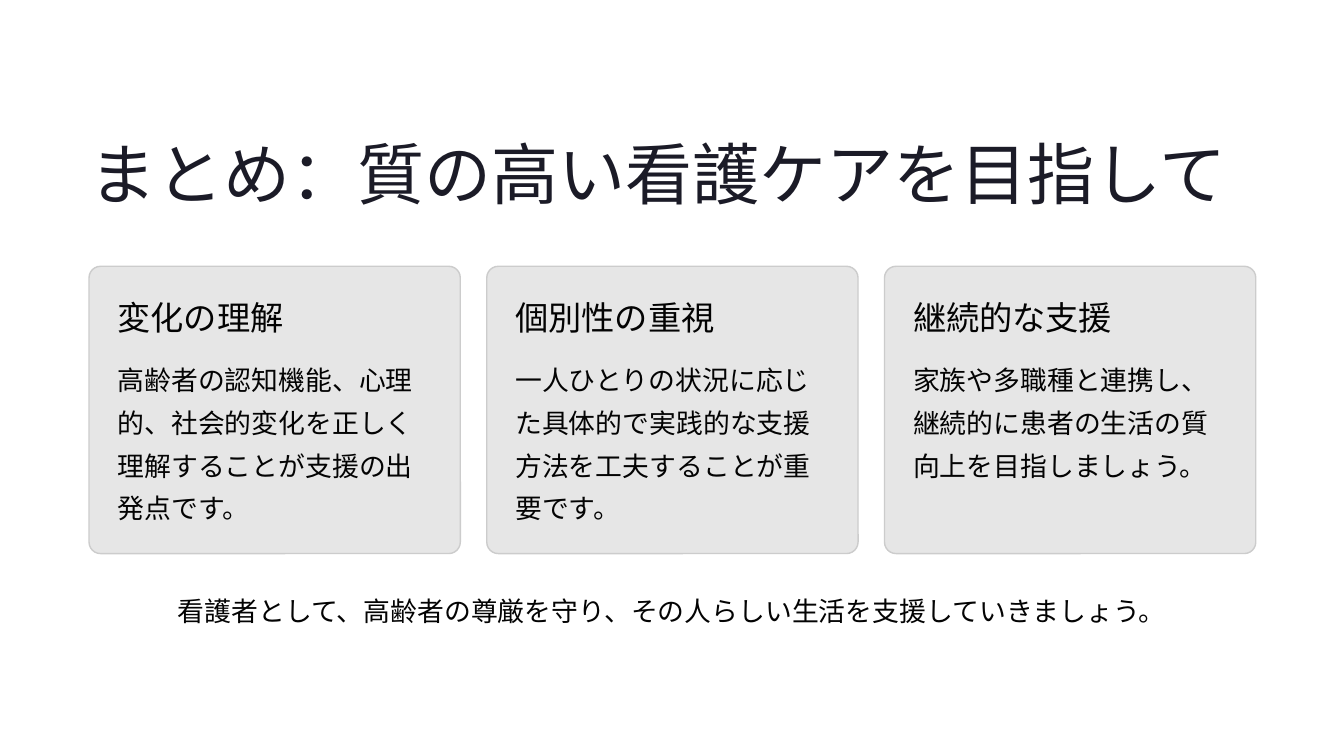
import dataclasses

import pptx
import pptx.dml.color
import pptx.enum.shapes
import pptx.enum.text
import pptx.util
from pptx.util import Inches

ALIGN = pptx.enum.text.PP_ALIGN


@dataclasses.dataclass(frozen=True)
class Theme:
    heading_font: str = "Inter"
    body_font: str = "Lato"
    background: str = "FFFFFF"
    title_color: str = "1B1B27"
    text_color: str = "030303"
    card_fill: str = "E6E6E6"
    card_line: str = "CCCCCC"
    title_size: float = 57.5
    heading_size: float = 28.5
    body_size: float = 23
    title_leading: float = 72
    heading_leading: float = 36
    body_leading: float = 36.5


@dataclasses.dataclass(frozen=True)
class Card:
    heading: str
    body: str


THEME = Theme()
CARDS = [
    Card("変化の理解", "高齢者の認知機能、心理的、社会的変化を正しく理解することが支援の出発点です。"),
    Card("個別性の重視", "一人ひとりの状況に応じた具体的で実践的な支援方法を工夫することが重要です。"),
    Card("継続的な支援", "家族や多職種と連携し、継続的に患者の生活の質向上を目指しましょう。"),
]
MARGIN = 1.06
CONTENT_WIDTH = 13.89
CARD_TOP, CARD_WIDTH, CARD_HEIGHT = 3.17, 4.42, 3.42
CARD_PADDING = 0.34
CARD_PITCH = (CONTENT_WIDTH - CARD_WIDTH) / (len(CARDS) - 1)


def rgb(value: str) -> pptx.dml.color.RGBColor:
    return pptx.dml.color.RGBColor.from_string(value)


def write_text(box, text: str, *, font: str, size: float, leading: float,
               color: str = THEME.text_color, align=ALIGN.LEFT, wrap: bool = False) -> None:
    frame = box.text_frame
    frame.margin_left = frame.margin_top = frame.margin_right = frame.margin_bottom = 0
    frame.auto_size = pptx.enum.text.MSO_AUTO_SIZE.NONE
    frame.vertical_anchor = pptx.enum.text.MSO_ANCHOR.TOP
    frame.word_wrap = wrap
    para = frame.paragraphs[0]
    para.alignment = align
    para.line_spacing = pptx.util.Pt(leading)
    span = para.add_run()
    span.text = text
    span.font.name = font
    span.font.size = pptx.util.Pt(size)
    span.font.color.rgb = rgb(color)


def add_text(page, left: float, top: float, width: float, height: float,
             text: str, **text_format) -> None:
    box = page.shapes.add_textbox(Inches(left), Inches(top), Inches(width), Inches(height))
    write_text(box, text, **text_format)


def add_title(page, text: str) -> None:
    title = page.shapes.title
    title.left, title.top = Inches(MARGIN), Inches(1.53)
    title.width, title.height = Inches(13.61), Inches(1)
    write_text(title, text, font=THEME.heading_font, size=THEME.title_size,
               leading=THEME.title_leading, color=THEME.title_color)


def add_card(page, card: Card, left: float) -> None:
    panel = page.shapes.add_shape(
        pptx.enum.shapes.MSO_SHAPE.ROUNDED_RECTANGLE,
        Inches(left), Inches(CARD_TOP), Inches(CARD_WIDTH), Inches(CARD_HEIGHT))
    panel.adjustments[0] = 0.04
    panel.shadow.inherit = False
    panel.fill.solid()
    panel.fill.fore_color.rgb = rgb(THEME.card_fill)
    panel.line.color.rgb = rgb(THEME.card_line)
    panel.line.width = pptx.util.Pt(1.2)

    text_left = left + CARD_PADDING
    text_width = CARD_WIDTH - 2 * CARD_PADDING
    add_text(page, text_left, CARD_TOP + CARD_PADDING, text_width, 0.5, card.heading,
             font=THEME.heading_font, size=THEME.heading_size, leading=THEME.heading_leading)
    add_text(page, text_left, CARD_TOP + 1.04, text_width, 2.05, card.body,
             font=THEME.body_font, size=THEME.body_size, leading=THEME.body_leading, wrap=True)


def main() -> None:
    deck = pptx.Presentation()
    deck.slide_width, deck.slide_height = Inches(16), Inches(9)
    title_only = deck.slide_layouts.get_by_name("Title Only")
    page = deck.slides.add_slide(title_only)
    page.background.fill.solid()
    page.background.fill.fore_color.rgb = rgb(THEME.background)

    add_title(page, "まとめ：質の高い看護ケアを目指して")
    for index, card in enumerate(CARDS):
        add_card(page, card, MARGIN + index * CARD_PITCH)
    add_text(page, MARGIN, 6.96, CONTENT_WIDTH, 0.51,
             "看護者として、高齢者の尊厳を守り、その人らしい生活を支援していきましょう。",
             font=THEME.body_font, size=THEME.body_size, leading=THEME.body_leading,
             align=ALIGN.CENTER)
    deck.save("out.pptx")


if __name__ == "__main__":
    main()
